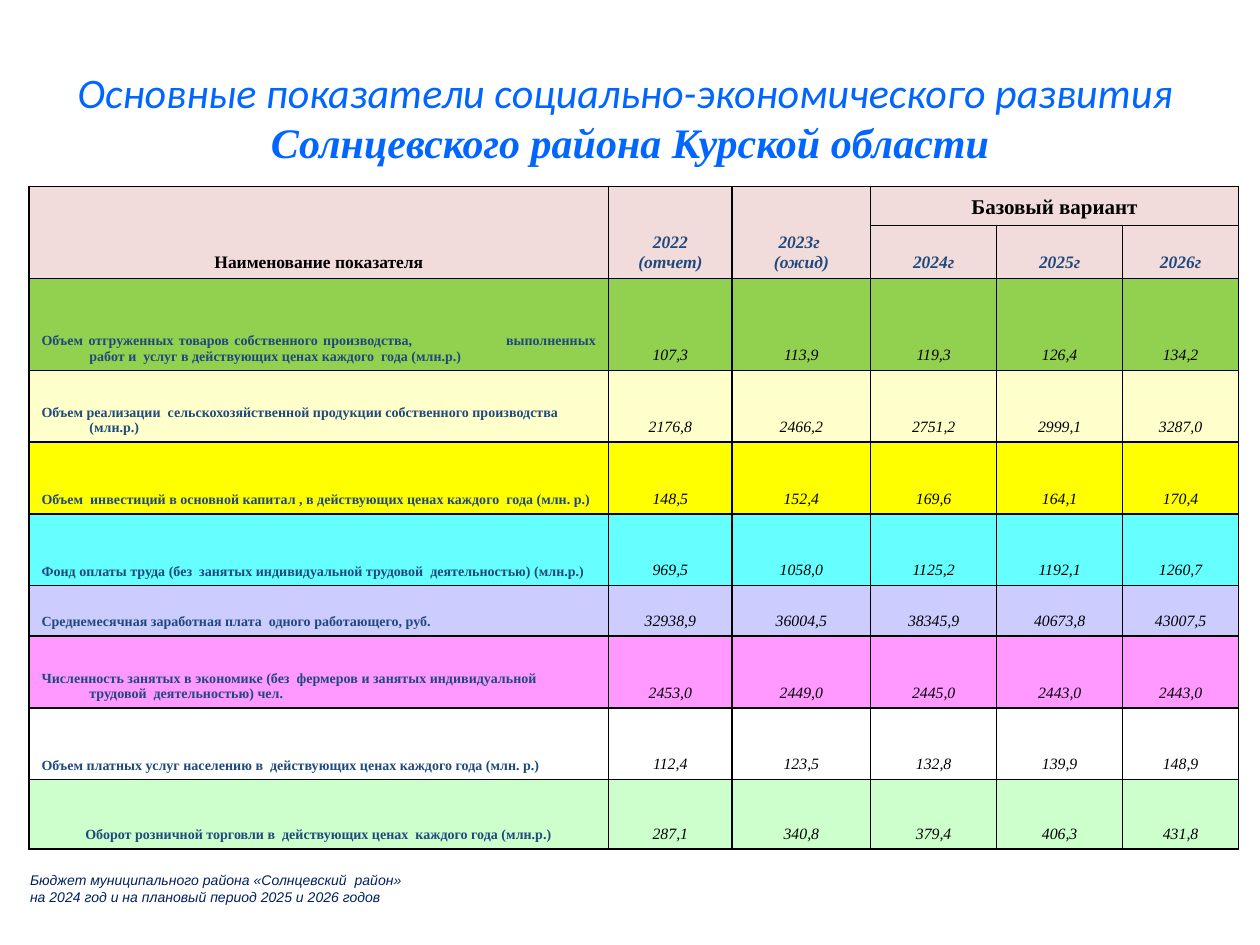
"""Build a slide with a table of district social and economic indicators."""
from lxml import etree
from pptx import Presentation
from pptx import util as u
from pptx.dml.color import RGBColor
from pptx.enum import text
from pptx.oxml import ns

SERIF, NAVY, BLACK, PINK = "Times New Roman", "1F497D", "000000", "F2DCDB"
LEFT, CENTER, JUSTIFY = text.PP_ALIGN.LEFT, text.PP_ALIGN.CENTER, text.PP_ALIGN.JUSTIFY
NO_STYLE = "{2D5ABB26-0587-4C30-8999-92F81FD0307C}"

TITLE = [
    ("Основные показатели социально-экономического развития ",
     dict(name="Calibri", size=24, color="0066FF", italic=True)),
    ("Солнцевского района Курской области",
     dict(name=SERIF, size=24, color="0066FF", italic=True, bold=True)),
]
FOOTER = ["Бюджет муниципального района «Солнцевский  район»",
          "на 2024 год и на плановый период 2025 и 2026 годов"]
FOOTER_FONT = dict(name="Arial", size=8, color="002060", italic=True)

HEAD_FONT = dict(name=SERIF, size=10, color=BLACK, bold=True)
YEAR_FONT = dict(HEAD_FONT, color=NAVY, italic=True)
GROUP_FONT = dict(HEAD_FONT, size=12)
NAME_FONT = dict(name=SERIF, size=8, color=NAVY, bold=True)
VALUE_FONT = dict(name=SERIF, size=9, color=BLACK, italic=True)

COLUMNS = [4.6, 0.98, 1.1, 1, 0.6, 0.4, 0.28, 0.64]
ROWS = [0.66, 0.59, 0.31, 0.42, 0.73, 0.57, 0.57, 0.57, 0.4, 0.57, 0.57, 0.55]
HEAD_ROW, YEAR_ROW, BODY_ROW = 2, 3, 4
VALUE_COLUMNS = [1, 2, 3, 4, 6]
HEADERS = [
    (HEAD_ROW, 0, ["Наименование показателя"], HEAD_FONT),
    (HEAD_ROW, 1, ["2022", "(отчет)"], YEAR_FONT),
    (HEAD_ROW, 2, ["2023г ", "(ожид)"], YEAR_FONT),
    (HEAD_ROW, 3, ["Базовый вариант"], GROUP_FONT),
    (YEAR_ROW, 3, ["2024г"], YEAR_FONT),
    (YEAR_ROW, 4, ["2025г"], YEAR_FONT),
    (YEAR_ROW, 6, ["2026г"], YEAR_FONT),
]
WIDE_GAP_AFTER = "Объем отгруженных товаров собственного производства,"
INDICATORS = [
    (WIDE_GAP_AFTER + " выполненных работ и  услуг в действующих ценах каждого  года (млн.р.)",
     "92D050", JUSTIFY, ["107,3", "113,9", "119,3", "126,4", "134,2"]),
    ("Объем реализации  сельскохозяйственной продукции собственного производства (млн.р.)",
     "FFFFCC", LEFT, ["2176,8", "2466,2", "2751,2", "2999,1", "3287,0"]),
    ("Объем  инвестиций в основной капитал , в действующих ценах каждого  года (млн. р.)",
     "FFFF00", LEFT, ["148,5", "152,4", "169,6", "164,1", "170,4"]),
    ("Фонд оплаты труда (без  занятых индивидуальной трудовой  деятельностью) (млн.р.)",
     "66FFFF", LEFT, ["969,5", "1058,0", "1125,2", "1192,1", "1260,7"]),
    ("Среднемесячная заработная плата  одного работающего, руб.",
     "CCCCFF", LEFT, ["32938,9", "36004,5", "38345,9", "40673,8", "43007,5"]),
    ("Численность занятых в экономике (без  фермеров и занятых индивидуальной "
     "трудовой  деятельностью) чел.",
     "FF99FF", LEFT, ["2453,0", "2449,0", "2445,0", "2443,0", "2443,0"]),
    ("Объем платных услуг населению в  действующих ценах каждого года (млн. р.)",
     None, JUSTIFY, ["112,4", "123,5", "132,8", "139,9", "148,9"]),
    ("Оборот розничной торговли в  действующих ценах  каждого года (млн.р.)",
     "CCFFCC", CENTER, ["287,1", "340,8", "379,4", "406,3", "431,8"]),
]


def rgb(value):
    """Turn a hex string into a colour."""
    return RGBColor.from_string(value)


def add_span(para, words, style):
    """Add formatted words to a paragraph."""
    span = para.add_run()
    span.text = words
    for key, value in style.items():
        if key == "color":
            span.font.color.rgb = rgb(value)
        else:
            setattr(span.font, key, u.Pt(value) if key == "size" else value)
    return span


def write(frame, lines, style, align=LEFT):
    """Write one paragraph for each line."""
    for number, line in enumerate(lines):
        para = frame.add_paragraph() if number else frame.paragraphs[0]
        para.alignment = align
        add_span(para, line, style)


def write_name(frame, name, align):
    """Write an indicator name with a hanging indent."""
    para = frame.paragraphs[0]
    para.alignment = align
    hang = u.Inches(0.38)
    props = para._p.get_or_add_pPr()
    props.set("marL", str(hang))
    props.set("indent", str(-hang))
    if name.startswith(WIDE_GAP_AFTER):
        add_span(para, WIDE_GAP_AFTER, NAME_FONT)
        gap = add_span(para, " ", NAME_FONT)
        gap._r.get_or_add_rPr().set("spc", "5000")
        name = name[len(WIDE_GAP_AFTER) + 1:]
    add_span(para, name, NAME_FONT)


def set_fill(cell, color):
    """Fill a cell, or leave it clear."""
    if color:
        cell.fill.solid()
        cell.fill.fore_color.rgb = rgb(color)
    else:
        cell.fill.background()


def set_borders(cell, sides):
    """Draw black lines on the given sides and none on the others."""
    props = cell._tc.get_or_add_tcPr()
    for place, side in enumerate("LRTB"):
        line = etree.Element(ns.qn("a:ln" + side), w=str(u.Pt(1)))
        if side in sides:
            fill = etree.SubElement(line, ns.qn("a:solidFill"))
            etree.SubElement(fill, ns.qn("a:srgbClr"), val=BLACK)
        else:
            etree.SubElement(line, ns.qn("a:noFill"))
        props.insert(place, line)


def add_box(page, *place):
    """Add a wrapping text box and return its frame."""
    frame = page.shapes.add_textbox(*map(u.Inches, place)).text_frame
    frame.word_wrap = True
    return frame


def add_indicators(page):
    """Add the table of indicators."""
    place = map(u.Inches, (0.23, 0.23, sum(COLUMNS), sum(ROWS)))
    table = page.shapes.add_table(len(ROWS), len(COLUMNS), *place).table
    table.first_row = table.horz_banding = False
    table._tbl.tblPr.find(ns.qn("a:tableStyleId")).text = NO_STYLE
    for column, width in zip(table.columns, COLUMNS):
        column.width = u.Inches(width)
    for row, height in zip(table.rows, ROWS):
        row.height = u.Inches(height)

    fills = [None] * HEAD_ROW + [PINK] * 2 + [item[1] for item in INDICATORS]
    sides = ["", "B"] + ["LRTB"] * (len(ROWS) - HEAD_ROW)
    for row, color, edges in zip(table.rows, fills, sides):
        for cell in row.cells:
            cell.vertical_anchor = text.MSO_ANCHOR.BOTTOM
            cell.margin_left = cell.margin_right = u.Inches(0.1)
            set_fill(cell, color)
            set_borders(cell, edges)

    merges = [(0, 0, 0, 7), (1, 3, 1, 4), (1, 5, 1, 6), (HEAD_ROW, 3, HEAD_ROW, 7)]
    merges += [(HEAD_ROW, col, YEAR_ROW, col) for col in range(3)]
    merges += [(row, col, row, col + 1) for row in range(YEAR_ROW, len(ROWS)) for col in (4, 6)]
    for top, left, bottom, right in merges:
        table.cell(top, left).merge(table.cell(bottom, right))

    for row, col, lines, style in HEADERS:
        write(table.cell(row, col).text_frame, lines, style, CENTER)
    for row, (name, _, align, values) in enumerate(INDICATORS, BODY_ROW):
        write_name(table.cell(row, 0).text_frame, name, align)
        for col, value in zip(VALUE_COLUMNS, values):
            write(table.cell(row, col).text_frame, [value], VALUE_FONT, CENTER)


def main():
    """Build and save the deck."""
    deck = Presentation()
    deck.slide_width, deck.slide_height = u.Inches(10), u.Inches(7.5)
    page = deck.slides.add_slide(deck.slide_layouts[6])
    frame = add_box(page, 0.5, 0.3, 9, 1.25)
    frame.vertical_anchor = text.MSO_ANCHOR.MIDDLE
    para = frame.paragraphs[0]
    para.alignment = CENTER
    for number, (words, style) in enumerate(TITLE):
        if number:
            para.add_line_break()
        add_span(para, words, style)
    add_indicators(page)
    write(add_box(page, 0.14, 6.87, 6.9, 0.37), FOOTER, FOOTER_FONT)
    deck.save("out.pptx")


if __name__ == "__main__":
    main()
